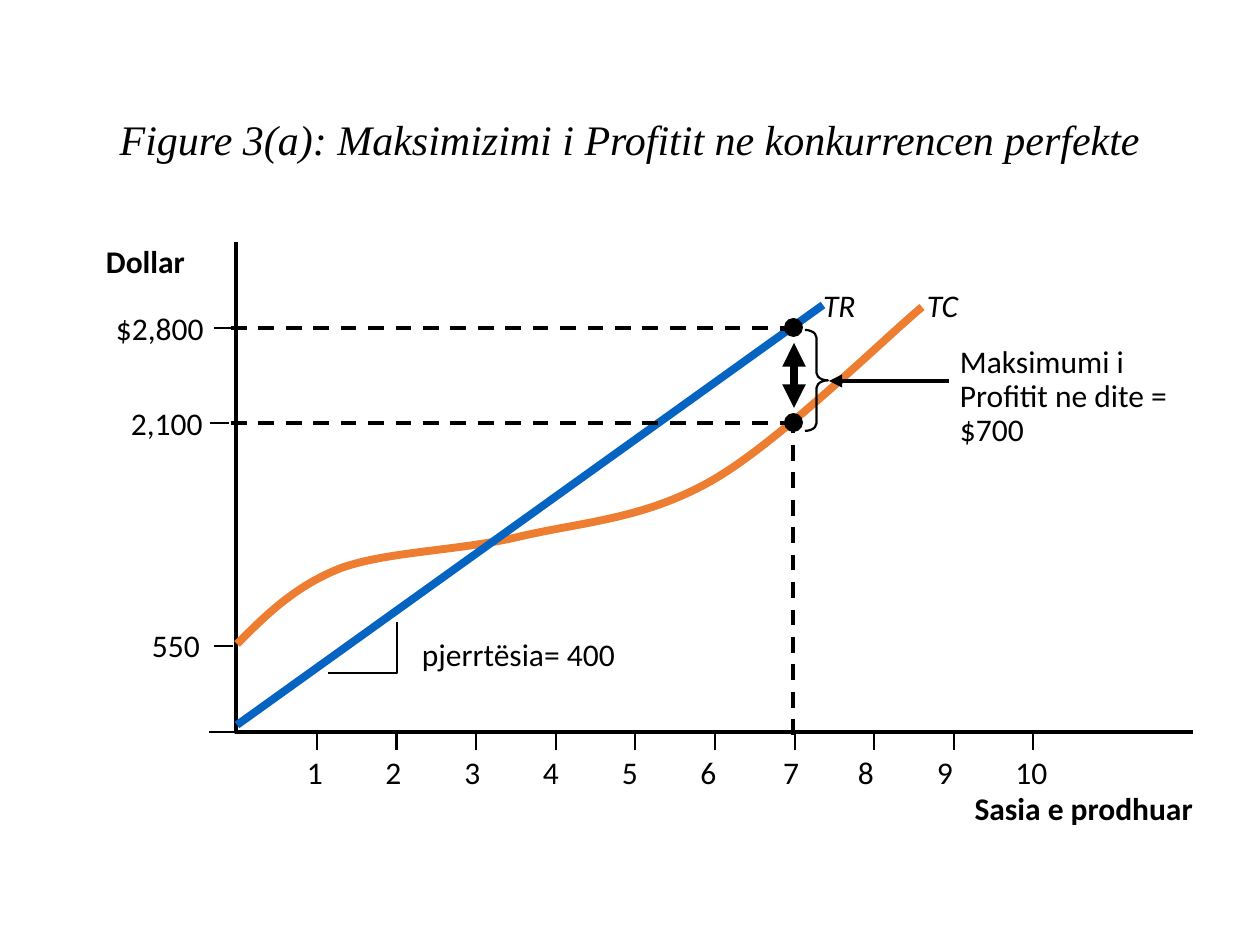
from dataclasses import dataclass
from typing import Any

from lxml import etree
from pptx import Presentation
from pptx.dml.color import RGBColor
from pptx.enum.dml import MSO_LINE
from pptx.enum.shapes import MSO_CONNECTOR, MSO_SHAPE
from pptx.enum.text import MSO_ANCHOR, PP_ALIGN
from pptx.oxml.ns import qn
from pptx.util import Pt

STRAIGHT = MSO_CONNECTOR.STRAIGHT
OVAL, BRACE = MSO_SHAPE.OVAL, MSO_SHAPE.RIGHT_BRACE
LEFT, CENTER, RIGHT = PP_ALIGN.LEFT, PP_ALIGN.CENTER, PP_ALIGN.RIGHT
TOP, MIDDLE = MSO_ANCHOR.TOP, MSO_ANCHOR.MIDDLE
DASH = MSO_LINE.DASH
PX = 914400 / 126
COLORS = {"ink": "000000", "cost": "ED7D31", "revenue": "0563C1"}
BODY, SERIF = "Calibri", "Times New Roman"
THIN, DASHED, AXIS, CURVE = 1.25, 2.25, 2.5, 4.5


def px(n):
    """Turn pixels into EMU."""
    return round(n * PX)


def rgb(name):
    """Look up a named colour."""
    return RGBColor.from_string(COLORS[name])


@dataclass
class Region:
    """A box on the slide whose parts are placed from its top left corner."""
    shapes: Any
    x: int
    y: int
    w: int
    h: int

    def at(self, x, y):
        """Give the slide position of a point in the box."""
        return px(self.x + x), px(self.y + y)

    def text(self, text, x, y, w, h=38, size=18, font=BODY, bold=False,
             italic=False, align=LEFT, anchor=TOP, wrap=False, spacing=None):
        """Add one paragraph of text."""
        tf = self.shapes.add_textbox(*self.at(x, y), px(w), px(h)).text_frame
        tf.word_wrap, tf.vertical_anchor = wrap, anchor
        tf.margin_left = tf.margin_right = tf.margin_top = tf.margin_bottom = 0
        p = tf.paragraphs[0]
        p.alignment, p.line_spacing = align, spacing
        r = p.add_run()
        r.text = text
        r.font.name, r.font.size = font, Pt(size)
        r.font.bold, r.font.italic = bold, italic
        r.font.color.rgb = rgb("ink")

    def line(self, start, end, width=THIN, color="ink", dash=None, arrows=()):
        """Add a straight line, with optional headEnd and tailEnd arrows."""
        s = self.shapes.add_connector(STRAIGHT, *self.at(*start), *self.at(*end))
        s.line.width, s.line.color.rgb = Pt(width), rgb(color)
        if dash:
            s.line.dash_style = dash
        for tag in arrows:
            etree.SubElement(s.line._get_or_add_ln(), qn("a:" + tag), type="triangle")
        etree.SubElement(s._element.spPr, qn("a:effectLst"))

    def outline(self, points, width=THIN, color="ink"):
        """Add an open outline through the points."""
        first, *rest = [self.at(*point) for point in points]
        fb = self.shapes.build_freeform(*first)
        fb.add_line_segments(rest, close=False)
        s = fb.convert_to_shape()
        s.shadow.inherit = False
        s.fill.background()
        s.line.width, s.line.color.rgb = Pt(width), rgb(color)
        return s

    def curve(self, points, width, color):
        """Add a Bezier curve from a start point and triples of points."""
        s = self.outline(points, width, color)
        segments = list(s._element.iter(qn("a:lnTo")))
        for i in range(0, len(segments), 3):
            bezier = etree.Element(qn("a:cubicBezTo"))
            segments[i].addprevious(bezier)
            for segment in segments[i:i + 3]:
                bezier.append(segment[0])
                segment.getparent().remove(segment)

    def preset(self, kind, x, y, w, h):
        """Add a preset shape without fill or line."""
        s = self.shapes.add_shape(kind, *self.at(x, y), px(w), px(h))
        s.shadow.inherit = False
        s.fill.background()
        s.line.fill.background()
        return s


def add_title(box):
    """Place the figure title."""
    box.text("Figure 3(a): Maksimizimi i Profitit ne konkurrencen perfekte", 0, 0,
             box.w, box.h, size=24, font=SERIF, italic=True, align=CENTER,
             anchor=MIDDLE, wrap=True, spacing=0.9)


def add_axes(box):
    """Draw both axes with their ticks, values and names."""
    box.text("Dollar", -130, 0, 91, bold=True)
    box.text("Sasia e prodhuar", box.w - 258, box.h + 57, 258, bold=True,
             align=RIGHT, wrap=True)
    for text, x, y, w in (("$2,800", -120, 67, 96), ("2,100", -105, 162, 78),
                          ("550", -84, 384, 53)):
        box.text(text, x, y, w)
    for x, y, length in ((-3, 86, 19), (-7, 181, 19), (-3, 404, 19), (0, box.h, 27)):
        box.line((x, y), (x - length, y))
    for n in range(1, 11):
        x = 1.4 + 79.6 * n
        box.line((x, box.h - 1), (x, box.h + 18))
        nudge = 4 if n == 7 else 0
        box.text(str(n), -8 + 78.75 * n + nudge, box.h + 21, 18 * len(str(n)))
    box.outline([(0, 0), (0, box.h), (box.w, box.h)], AXIS)


def add_curves(box):
    """Draw total cost, total revenue and the slope mark."""
    box.curve([(1, 402), (30, 373), (59, 344), (105, 326), (153, 309), (224, 309),
               (286, 294), (347, 280), (408, 277), (475, 239), (541, 202), (651, 94),
               (686, 65)], CURVE, "cost")
    box.line((1, 483), (587, 63), CURVE, "revenue")
    box.text("TR", 587, 44, 42, italic=True)
    box.text("TC", 691, 44, 42, italic=True)
    box.outline([(92, 431), (161, 431), (161, 380)])
    box.text("pjerrtësia= 400", 186, 393, 213)


def add_profit(box):
    """Mark the greatest profit between the two curves."""
    x, revenue, cost = 557, 86, 181
    for y in (revenue, cost):
        s = box.preset(OVAL, x - 9, y - 10, 19, 19)
        s.fill.solid()
        s.fill.fore_color.rgb = rgb("ink")
    for start, end in (((x, box.h + 3), (x, cost - 3)),
                       ((-5, cost), (x + 5, cost)),
                       ((-5, revenue), (x - 5, revenue))):
        box.line(start, end, DASHED, dash=DASH)
    box.line((x + 1, 101), (x + 1, 166), CURVE, arrows=("headEnd", "tailEnd"))
    box.line((x + 1, 88), (x - 13, 88))
    s = box.preset(BRACE, x + 12, 88, 23, 101)
    s.line.width, s.line.color.rgb = Pt(THIN), rgb("ink")
    s.adjustments[0] = 0.33
    box.line((713, 139), (593, 139), AXIS, arrows=("tailEnd",))
    box.text("Maksimumi i Profitit ne dite = $700", 724, 104, 233, 103,
             wrap=True, spacing=0.9)


def main():
    """Build and save the slide."""
    prs = Presentation()
    prs.slide_width, prs.slide_height = px(1260), px(945)
    shapes = prs.slides.add_slide(prs.slide_layouts[6]).shapes
    add_title(Region(shapes, 87, 50, 1086, 183))
    plot = Region(shapes, 236, 242, 957, 490)
    add_axes(plot)
    add_curves(plot)
    add_profit(plot)
    prs.save("out.pptx")


if __name__ == "__main__":
    main()
